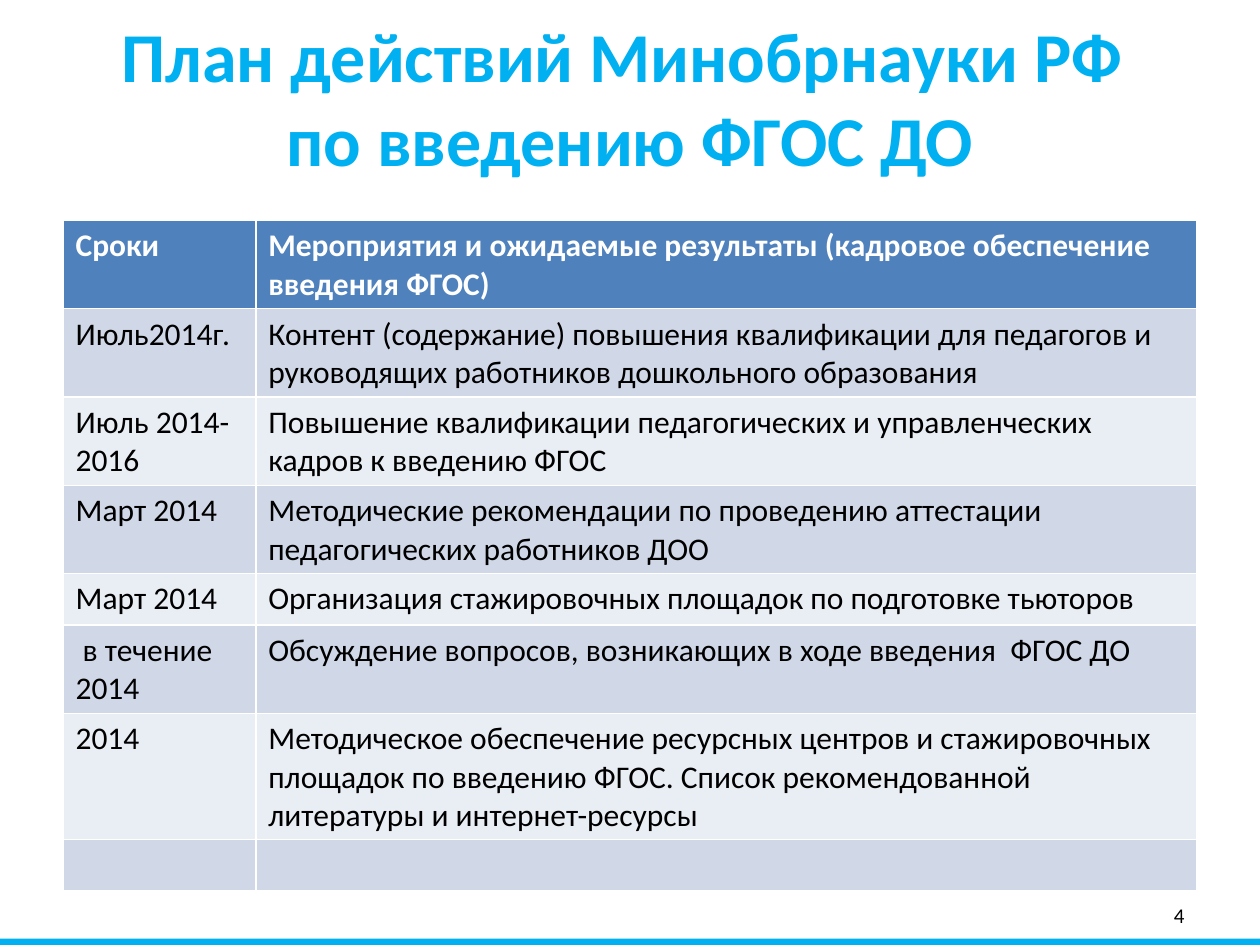
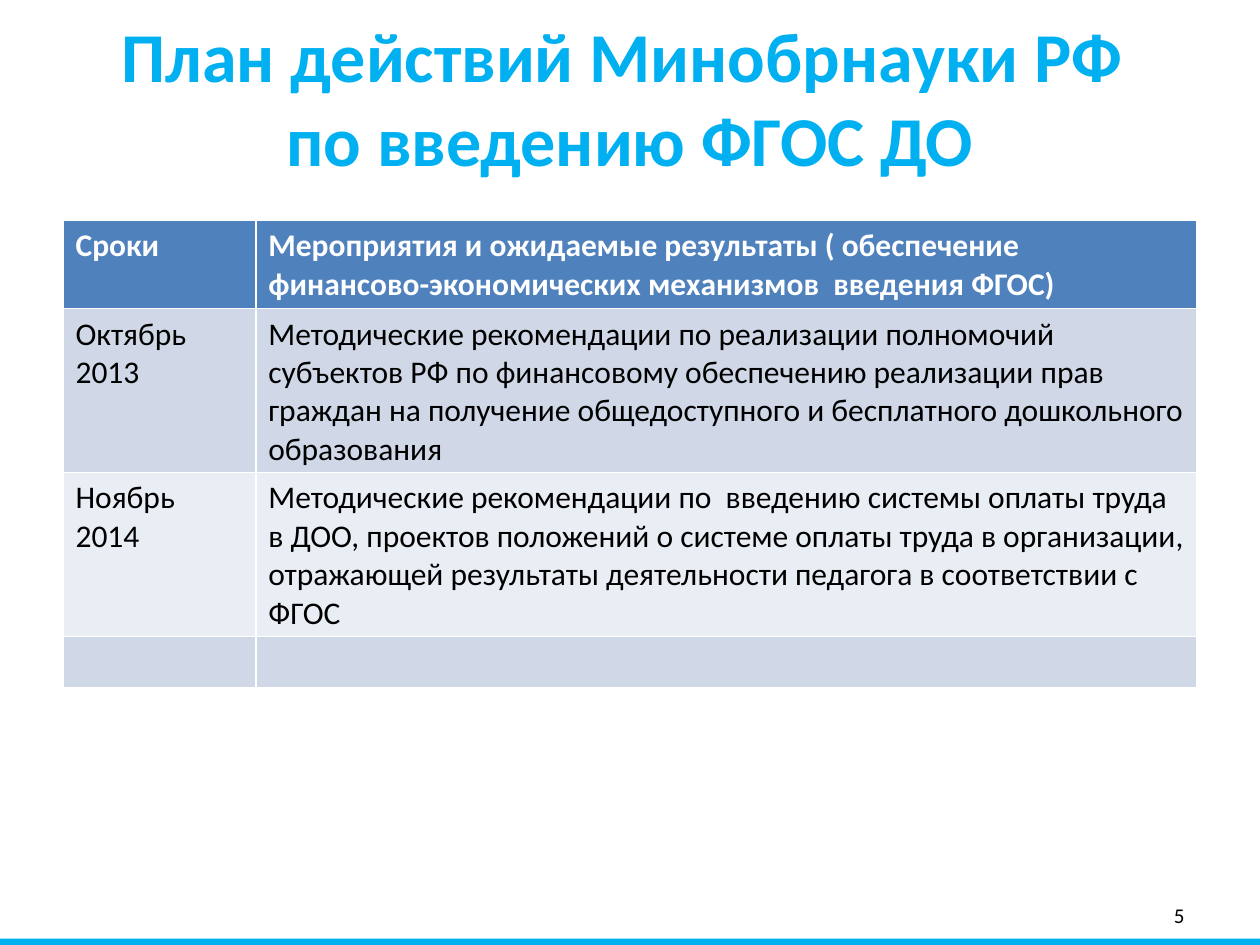
from dataclasses import dataclass

from pptx import Presentation
from pptx.dml.color import RGBColor
from pptx.enum.shapes import MSO_SHAPE
from pptx.enum.text import MSO_ANCHOR, MSO_AUTO_SIZE, PP_ALIGN
from pptx.util import Inches, Pt


@dataclass(frozen=True)
class Theme:
    """Colours, font and type sizes shared by all slides."""
    accent: str = "00B0F0"
    header: str = "4F81BD"
    bands: tuple = ("D0D8E8", "E9EDF4")
    light: str = "FFFFFF"
    dark: str = "000000"
    font: str = "Calibri"
    title_size: int = 40
    table_size: int = 18
    number_size: int = 12


class Plan:
    """Draws plan slides on a grid of 20 columns by 15 rows."""
    COLUMNS, ROWS = 20, 15

    def __init__(self, theme):
        """Open a deck and set its slide size."""
        self.theme = theme
        self.deck = Presentation()
        self.deck.slide_width, self.deck.slide_height = Inches(10), Inches(7.5)
        self.page = None

    def across(self, columns):
        """Turn grid columns into a length."""
        return round(self.deck.slide_width * columns / self.COLUMNS)

    def down(self, rows):
        """Turn grid rows into a length."""
        return round(self.deck.slide_height * rows / self.ROWS)

    def area(self, left, top, width, height):
        """Turn a grid area into left, top, width and height."""
        return self.across(left), self.down(top), self.across(width), self.down(height)

    def new_page(self):
        """Start a slide with only a title."""
        self.page = self.deck.slides.add_slide(self.deck.slide_layouts[5])

    def footer_band(self):
        """Draw the bottom band once and hand it to the master."""
        band = self.page.shapes.add_shape(MSO_SHAPE.RECTANGLE, *self.area(0, 14.9, 20, 0.1))
        band.shadow.inherit = False
        band.fill.solid()
        band.fill.fore_color.rgb = RGBColor.from_string(self.theme.accent)
        band.line.fill.background()
        band.element.xpath("./p:nvSpPr/p:cNvPr")[0].set("id", "99")
        self.deck.slide_master.shapes.element.append(band.element)

    def fill_text(self, frame, text, size, color, bold=False, align=PP_ALIGN.LEFT):
        """Fill a text frame with one formatted paragraph."""
        frame.word_wrap = True
        frame.text = text
        para = frame.paragraphs[0]
        para.alignment = align
        look = {"name": self.theme.font, "size": Pt(size), "bold": bold}
        for span in para.runs:
            for key, value in look.items():
                setattr(span.font, key, value)
            span.font.color.rgb = RGBColor.from_string(color)

    def title(self, text):
        """Place the slide title."""
        box = self.page.shapes.title
        box.left, box.top, box.width, box.height = self.area(1, 0.1, 18, 2.5)
        self.fill_text(box.text_frame, text, self.theme.title_size, self.theme.accent,
                       True, PP_ALIGN.CENTER)
        box.text_frame.vertical_anchor = MSO_ANCHOR.TOP
        box.text_frame.auto_size = MSO_AUTO_SIZE.NONE

    def number(self, value):
        """Place the slide number."""
        box = self.page.shapes.add_textbox(*self.area(14.34, 14.12, 4.66, 0.8))
        self.fill_text(box.text_frame, str(value), self.theme.number_size, self.theme.dark,
                       align=PP_ALIGN.RIGHT)
        box.text_frame.vertical_anchor = MSO_ANCHOR.MIDDLE

    def table(self, rows):
        """Place a two-column table with a header and banded rows."""
        theme = self.theme
        grid = self.page.shapes.add_table(
            len(rows), 2, *self.area(1, 3.5, 18, 0.82 * len(rows))).table
        for column, width in zip(grid.columns, (3.06, 14.94)):
            column.width = self.across(width)
        for index, row in enumerate(rows):
            heading = index == 0
            fill = theme.header if heading else theme.bands[(index - 1) % 2]
            color = theme.light if heading else theme.dark
            for cell, text in zip(grid.rows[index].cells, row):
                cell.fill.solid()
                cell.fill.fore_color.rgb = RGBColor.from_string(fill)
                if text:
                    self.fill_text(cell.text_frame, text, theme.table_size, color, heading)


TITLE = "План действий Минобрнауки РФ \vпо введению ФГОС ДО"
BLANK = ("", "")
STAFF = [
    ("Сроки", "Мероприятия и ожидаемые результаты (кадровое обеспечение  введения ФГОС)"),
    ("Июль2014г.", "Контент (содержание) повышения квалификации для педагогов и "
     "руководящих работников дошкольного образования"),
    ("Июль 2014-2016", "Повышение квалификации педагогических и управленческих "
     "кадров к введению ФГОС"),
    ("Март 2014", "Методические рекомендации по проведению аттестации "
     "педагогических работников ДОО"),
    ("Март 2014", "Организация стажировочных площадок по подготовке тьюторов"),
    (" в течение 2014", "Обсуждение вопросов, возникающих в ходе введения  ФГОС ДО"),
    ("2014", "Методическое обеспечение ресурсных центров и стажировочных площадок "
     "по введению ФГОС. Список рекомендованной литературы и интернет-ресурсы"),
    BLANK,
]
FINANCE = [
    ("Сроки", "Мероприятия и ожидаемые результаты ( обеспечение  "
     "финансово-экономических механизмов  введения ФГОС)"),
    ("Октябрь 2013", "Методические рекомендации по реализации полномочий субъектов РФ "
     "по финансовому обеспечению реализации прав граждан на получение "
     "общедоступного и бесплатного дошкольного образования"),
    ("Ноябрь 2014", "Методические рекомендации по  введению системы оплаты труда в ДОО, "
     "проектов положений о системе оплаты труда в организации, отражающей "
     "результаты деятельности педагога в соответствии с ФГОС"),
    BLANK,
]


def main():
    """Build and save the deck."""
    plan = Plan(Theme())
    for number, rows in enumerate((STAFF, FINANCE), start=4):
        plan.new_page()
        if number == 4:
            plan.footer_band()
        plan.title(TITLE)
        plan.number(number)
        plan.table(rows)
    plan.deck.save("out.pptx")


if __name__ == "__main__":
    main()
